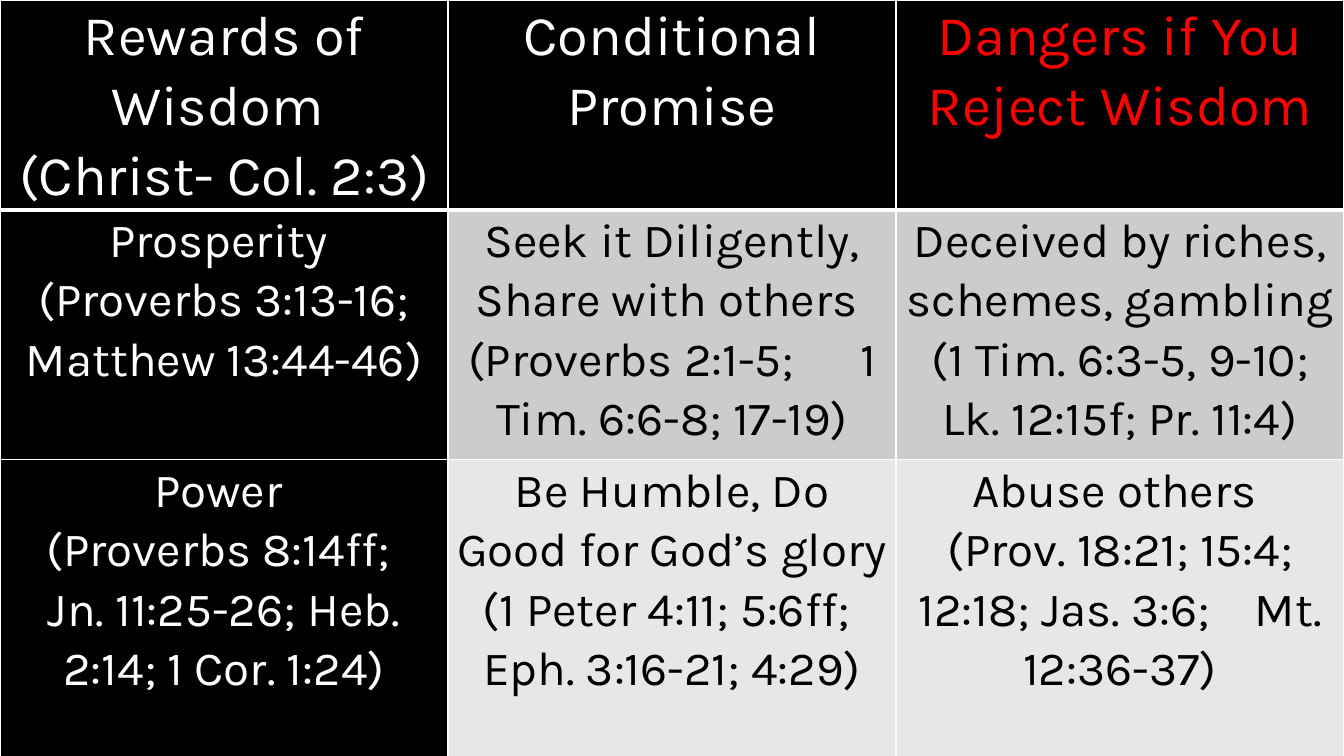
from lxml import etree
from pptx import Presentation
from pptx import util as u
from pptx.dml.color import RGBColor
from pptx.enum import text
from pptx.oxml import ns

BLACK, WHITE, RED = "000000", "FFFFFF", "FF0000"
GRAY, LIGHT_GRAY = "CCCCCC", "E7E7E7"

# Each row: height in cm, text size, then cells of (paragraphs, text colour, fill).
# A tuple paragraph is text, extra gap in points, text.
ROWS = [
    (5.26, 40, [
        (["Rewards of Wisdom ", "(Christ- Col. 2:3)"], WHITE, BLACK),
        (["Conditional Promise"], WHITE, BLACK),
        (["Dangers if You Reject Wisdom"], RED, BLACK),
    ]),
    (6.3, 34, [
        (["Prosperity ", "(Proverbs 3:13-16; Matthew 13:44-46)"], WHITE, BLACK),
        (["Seek it Diligently, Share with others ",
          ("(Proverbs 2:1-5;", 39, "1 Tim. 6:6-8; 17-19)")], BLACK, GRAY),
        (["Deceived by riches, schemes, gambling ",
          "(1 Tim. 6:3-5, 9-10; Lk. 12:15f; Pr. 11:4)"], BLACK, GRAY),
    ]),
    (7.59, 34, [
        (["Power ", "(Proverbs 8:14ff; ",
          "Jn. 11:25-26; Heb. 2:14; 1 Cor. 1:24)"], WHITE, BLACK),
        (["Be Humble, Do Good for God’s glory (1 Peter 4:11; 5:6ff; ",
          "Eph. 3:16-21; 4:29)"], BLACK, LIGHT_GRAY),
        (["Abuse others ",
          ("(Prov. 18:21; 15:4; 12:18; Jas. 3:6;", 24, "Mt. 12:36-37)")],
         BLACK, LIGHT_GRAY),
    ]),
]


def rgb(value):
    return RGBColor.from_string(value)


class SlideBuilder:
    font = "Karla"
    line_spacing = 1.07
    side_margin = u.Cm(0.18)

    def __init__(self, presentation, background):
        self.slide = presentation.slides.add_slide(presentation.slide_layouts[6])
        self.slide.background.fill.solid()
        self.slide.background.fill.fore_color.rgb = rgb(background)

    def fill_paragraph(self, paragraph, content, size, color):
        paragraph.alignment = text.PP_ALIGN.CENTER
        paragraph.line_spacing = self.line_spacing
        if isinstance(content, tuple):
            before, gap, after = content
            for part in (before, " ", after):
                paragraph.add_run().text = part
            # Widen the single space between the two references
            space = paragraph.runs[1]
            space._r.get_or_add_rPr().set("spc", str(gap * 100))
        else:
            paragraph.text = content
        for run in paragraph.runs:
            run.font.name = self.font
            run.font.size = u.Pt(size)
            run.font.bold = False
            run.font.color.rgb = rgb(color)

    def borders(self, cell, top, bottom):
        properties = cell._tc.get_or_add_tcPr()
        sides = {"lnL": 1, "lnR": 1, "lnT": top, "lnB": bottom}
        for index, (side, width) in enumerate(sides.items()):
            line = etree.Element(ns.qn(f"a:{side}"), w=str(u.Pt(width)))
            fill = etree.SubElement(line, ns.qn("a:solidFill"))
            etree.SubElement(fill, ns.qn("a:srgbClr"), val=WHITE)
            properties.insert(index, line)

    def cell(self, cell, paragraphs, size, color, fill):
        cell.margin_left = cell.margin_right = self.side_margin
        cell.margin_top = cell.margin_bottom = 0
        cell.fill.solid()
        cell.fill.fore_color.rgb = rgb(fill)
        frame = cell.text_frame
        for index, content in enumerate(paragraphs):
            paragraph = frame.add_paragraph() if index else frame.paragraphs[0]
            self.fill_paragraph(paragraph, content, size, color)

    def table(self, rows, width):
        columns = len(rows[0][2])
        height = u.Cm(sum(row[0] for row in rows))
        table = self.slide.shapes.add_table(
            len(rows), columns, 0, 0, width, height).table
        for row_index, (row_height, size, cells) in enumerate(rows):
            table.rows[row_index].height = u.Cm(row_height)
            for column, (paragraphs, color, fill) in enumerate(cells):
                cell = table.cell(row_index, column)
                self.cell(cell, paragraphs, size, color, fill)
                # A thicker rule separates the header from the body
                self.borders(cell, top=3 if row_index == 1 else 1,
                             bottom=3 if row_index == 0 else 1)


def main():
    presentation = Presentation()
    presentation.slide_width = u.Cm(33.87)
    presentation.slide_height = u.Cm(19.05)

    # Wisdom table across the whole slide
    builder = SlideBuilder(presentation, BLACK)
    builder.table(ROWS, presentation.slide_width)

    presentation.save("out.pptx")


if __name__ == "__main__":
    main()
